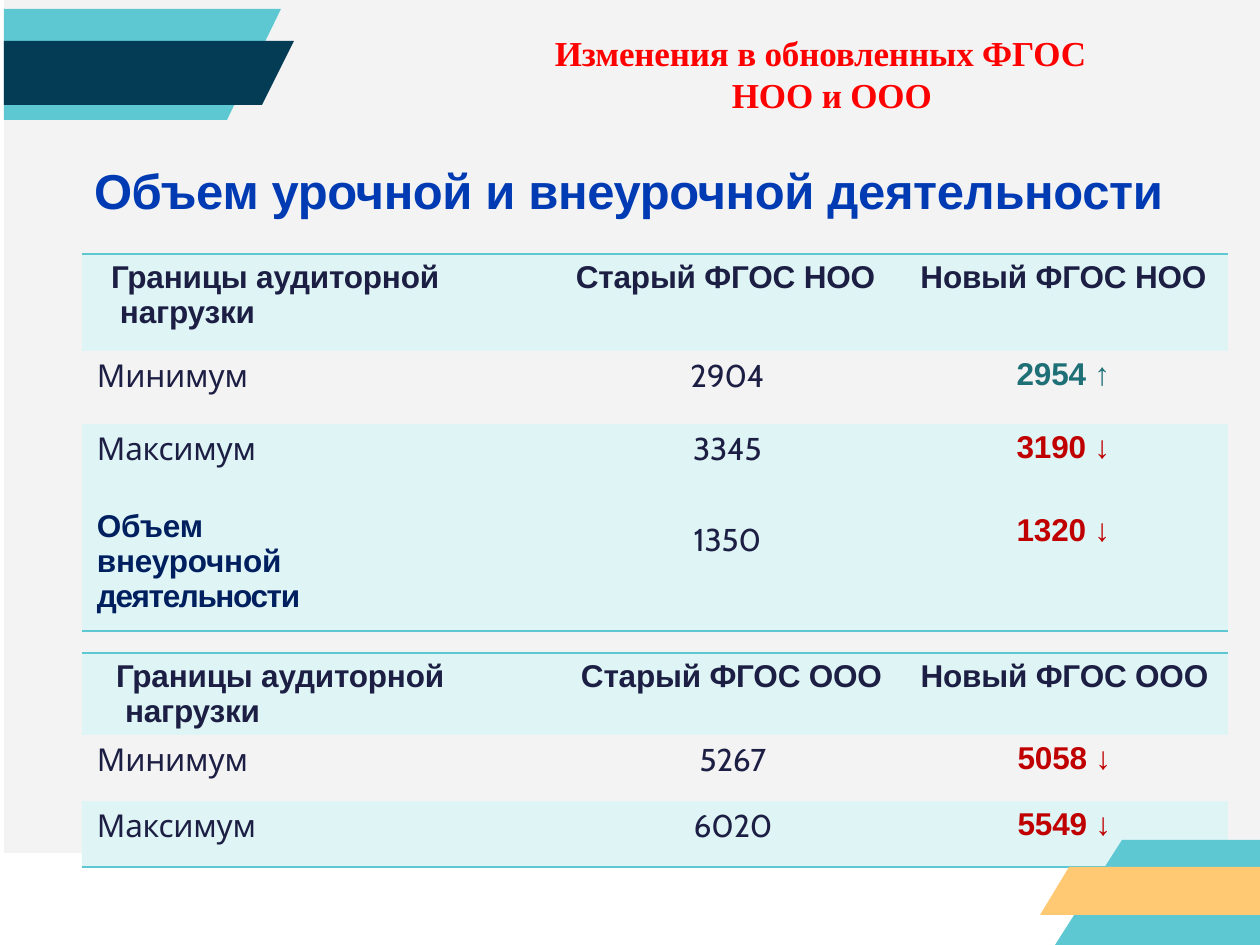
from dataclasses import dataclass

from lxml import etree
from pptx import Presentation
from pptx import util as u
from pptx.dml.color import RGBColor
from pptx.enum import shapes, text
from pptx.oxml.ns import qn

SCALE = 914400 / 126
NO_STYLE = "{2D5ABB26-0587-4C30-8999-92F81FD0307C}"
CENTER = text.PP_ALIGN.CENTER


def px(value):
    return u.Emu(round(value * SCALE))


@dataclass(frozen=True)
class Theme:
    page: str = "F3F3F3"
    band: str = "DEF4F5"
    teal: str = "5DC8D1"
    navy: str = "043B55"
    amber: str = "FFC973"
    red: str = "FF0000"
    blue: str = "003BB4"
    ink: str = "1C1F43"
    deep: str = "001F5F"
    up: str = "1F6F76"
    down: str = "C00000"
    title_size: int = 20
    heading_size: int = 28
    body_size: int = 18


THEME = Theme()


def style(color, size=THEME.body_size, name="Arial", bold=True):
    return {"color": color, "size": u.Pt(size), "name": name, "bold": bold}


TITLE = style(THEME.red, THEME.title_size, "Times New Roman")
HEADING = style(THEME.blue, THEME.heading_size)
HEADER = style(THEME.ink)
PLAIN = style(THEME.ink, name="Cabin", bold=False)
EXTRA = style(THEME.deep)
UP = style(THEME.up)
DOWN = style(THEME.down)


def para(words, look, left=0, indent=0, before=3.5, align=None, spc=-0.1, last_spc=None):
    return dict(words=words, look=look, left=left, indent=indent, before=before,
                align=align, spc=spc, last_spc=last_spc)


class Deck:
    def __init__(self, theme):
        self.theme = theme
        self.show = Presentation()
        self.show.slide_width, self.show.slide_height = px(1260), px(945)
        self.slide = self.show.slides.add_slide(self.show.slide_layouts[6])

    def paint(self, shape, color):
        shape.shadow.inherit = False
        shape.fill.solid()
        shape.fill.fore_color.rgb = RGBColor.from_string(color)
        shape.line.fill.background()

    def rect(self, x, y, width, height, color):
        box = self.slide.shapes.add_shape(
            shapes.MSO_SHAPE.RECTANGLE, px(x), px(y), px(width), px(height))
        self.paint(box, color)

    def ribbon(self, edge, top, bottom, top_tip, bottom_tip, color):
        outline = self.slide.shapes.build_freeform(top_tip, top, scale=SCALE)
        outline.add_line_segments([(edge, top), (edge, bottom), (bottom_tip, bottom)])
        self.paint(outline.convert_to_shape(), color)

    def rule(self, x1, y1, x2, y2, color):
        line = self.slide.shapes.add_connector(
            shapes.MSO_CONNECTOR.STRAIGHT, px(x1), px(y1), px(x2), px(y2))
        line.line.width = u.Pt(1)
        line.line.color.rgb = RGBColor.from_string(color)
        etree.SubElement(line._element.spPr, qn("a:effectLst"))

    def fill_text(self, frame, paragraphs):
        for index, item in enumerate(paragraphs):
            p = frame.add_paragraph() if index else frame.paragraphs[0]
            p.text = item["words"]
            for key, value in {"space_before": u.Pt(item["before"]),
                               "alignment": item["align"]}.items():
                setattr(p, key, value)
            props = p._p.get_or_add_pPr()
            for key, source in {"marL": "left", "indent": "indent"}.items():
                props.set(key, str(px(item[source])))
            for run in p.runs:
                for key, value in item["look"].items():
                    if key == "color":
                        run.font.color.rgb = RGBColor.from_string(value)
                    else:
                        setattr(run.font, key, value)
                run.font._element.set("spc", str(round(item["spc"] * 100)))
            if item["last_spc"] is not None:
                p.runs[-1].font._element.set("spc", str(round(item["last_spc"] * 100)))

    def label(self, x, y, width, height, paragraph):
        frame = self.slide.shapes.add_textbox(px(x), px(y), px(width), px(height)).text_frame
        margins = dict(margin_left=0, margin_right=0, margin_top=px(1), margin_bottom=0)
        for key, value in {"word_wrap": True, **margins}.items():
            setattr(frame, key, value)
        self.fill_text(frame, [paragraph])

    def border(self, cell, side, color):
        line = etree.Element(qn("a:" + side), w=str(u.Pt(1)))
        fill = etree.SubElement(line, qn("a:solidFill"))
        etree.SubElement(fill, qn("a:srgbClr"), val=color)
        cell._tc.get_or_add_tcPr().insert(0, line)

    def table(self, x, y, widths, heights, rows, fills, ruled, borders):
        grid = self.slide.shapes.add_table(
            len(heights), len(widths), px(x), px(y), px(sum(widths)), px(sum(heights))).table
        grid.first_row = grid.horz_banding = False
        grid._tbl.tblPr[0].text = NO_STYLE
        for column, width in zip(grid.columns, widths):
            column.width = px(width)
        for r, height in enumerate(heights):
            grid.rows[r].height = px(height)
            for c in range(len(widths)):
                cell = grid.cell(r, c)
                margins = dict(margin_left=0, margin_right=0,
                               margin_top=px(6), margin_bottom=0)
                for key, value in margins.items():
                    setattr(cell, key, value)
                cell.fill.solid()
                color = fills[r] if c < ruled else self.theme.page
                cell.fill.fore_color.rgb = RGBColor.from_string(color)
                if r in borders and c < ruled:
                    self.border(cell, borders[r], self.theme.teal)
                if c < len(rows[r]):
                    self.fill_text(cell.text_frame, rows[r][c])


def value_row(name, old, new, look, shift):
    return [[para(name, PLAIN, 15)],
            [para(old, PLAIN, shift, align=CENTER)],
            [para(new, look, align=CENTER)]]


def header_row(old, new, left, old_left, old_align, before):
    return [[para("Границы аудиторной нагрузки", HEADER, left + 9, -9, before)],
            [para(old, HEADER, old_left, align=old_align)],
            [para(new, HEADER, align=CENTER)]]


def main():
    deck = Deck(THEME)
    deck.rect(4, 0, 1256, 853, THEME.page)
    deck.ribbon(4, 9, 120, 281, 227, THEME.teal)
    deck.ribbon(4, 41, 105, 294, 262, THEME.navy)
    deck.label(553, 31, 541, 88, para(
        "Изменения в обновленных ФГОС НОО и ООО", TITLE, 179, -177, before=1))
    deck.label(92, 160, 1087, 62, para(
        "Объем урочной и внеурочной деятельности", HEADING, 2, before=1, spc=-0.2))

    primary = [
        header_row("Старый ФГОС НОО", "Новый ФГОС НОО", 29, 66, None, 3.5),
        value_row("Минимум", "2904", "2954 ↑", UP, 46),
        value_row("Максимум", "3345", "3190 ↓", DOWN, 46),
    ]
    activity = [
        para("Объем\vвнеурочной\vдеятельности", EXTRA, 15, before=23, last_spc=-0.8),
        para("1350", PLAIN, 46, before=30, align=CENTER),
        para("1320 ↓", DOWN, before=27.5, align=CENTER),
    ]
    for cell, extra in zip(primary[-1], activity):
        cell.append(extra)
    banded = [THEME.band, THEME.page, THEME.band]
    deck.table(82, 254, [428, 389, 329], [97, 73, 207], primary, banded, 3,
               {0: "lnT", 2: "lnB"})

    deck.rect(82, 801, 1146, 66, THEME.band)
    deck.rule(82, 867, 1228, 867, THEME.teal)
    basic = [
        header_row("Старый ФГОС ООО", "Новый ФГОС ООО", 34, 48, CENTER, 2.9),
        value_row("Минимум", "5267", "5058 ↓", DOWN, 51),
        value_row("Максимум", "6020", "5549 ↓", DOWN, 51),
    ]
    deck.table(82, 653, [432, 387, 327, 32], [82, 66, 52], basic, banded, 3, {0: "lnT"})

    deck.ribbon(1260, 840, 945, 1122, 1055, THEME.teal)
    deck.ribbon(1260, 867, 915, 1069, 1040, THEME.amber)
    deck.show.save("out.pptx")


if __name__ == "__main__":
    main()
